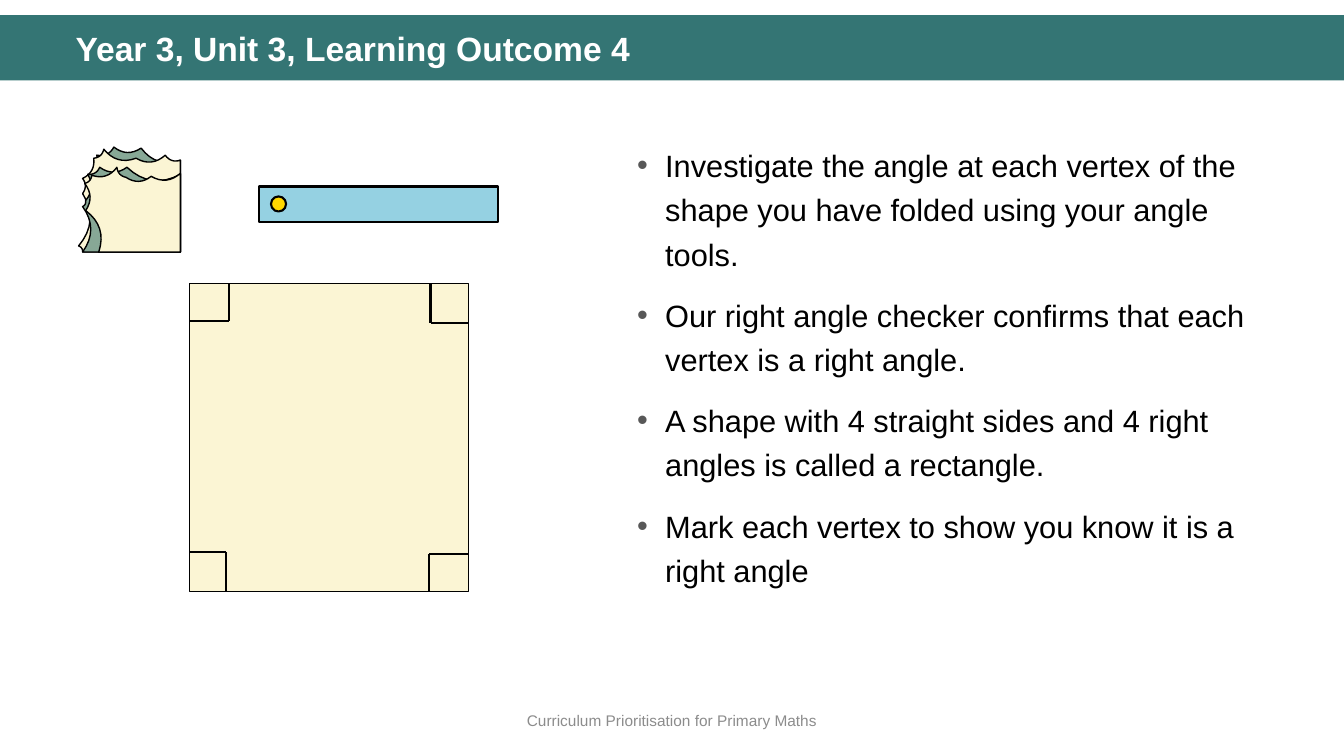
from dataclasses import dataclass
from itertools import pairwise

from lxml import etree
from pptx import Presentation
from pptx import util as u
from pptx.dml.color import RGBColor
from pptx.enum import shapes, text
from pptx.oxml import ns

COLOURS = {
    "band": "347574", "white": "FFFFFF", "black": "000000", "footer": "8C8C8C",
    "bullet": "585858", "paper": "FBF5D4", "shade": "87A896",
    "strip": "95D1E2", "pin": "FFD700",
}
FONT = "Arial"
CURVE_STEPS = 8
SAG = 0.18  # depth of a torn scallop as a share of its chord


@dataclass
class Box:
    left: float
    top: float
    width: float
    height: float


@dataclass
class Corner:
    """A right-angle mark between a vertex and an inner point, in cm."""
    vertex_x: float
    vertex_y: float
    inner_x: float
    inner_y: float


@dataclass
class Layer:
    """Torn paper: the cusps of its ragged edge, in hundredths of an inch."""
    colour: str
    cusps: list


FOLDED_SHEET = Box(4.78, 7.14, 7.03, 7.77)
CORNERS = [
    Corner(4.78, 7.14, 5.77, 8.08),
    Corner(11.79, 7.14, 10.85, 8.13),
    Corner(4.78, 14.91, 5.69, 13.92),
    Corner(11.79, 14.91, 10.82, 13.97),
]
TASKS = [
    "Investigate the angle at each vertex of the shape you have folded using your angle tools.",
    "Our right angle checker confirms that each vertex is a right angle.",
    "A shape with 4 straight sides and 4 right angles is called a rectangle.",
    "Mark each vertex to show you know it is a right angle",
]
CHECKER_VERTEX = (179, 250)
CHECKER_LAYERS = [
    Layer("shade", [(179, 159), (140, 147), (113, 146), (96, 154), (87, 176),
                    (96, 208), (98, 250)]),
    Layer("paper", [(179, 159), (164, 154), (135, 157), (103, 148), (93, 157),
                    (82, 177), (82, 192), (78, 244), (82, 250)]),
    Layer("shade", [(179, 173), (126, 166), (99, 166), (87, 173), (85, 199),
                    (82, 205), (82, 250)]),
    Layer("paper", [(179, 172), (150, 175), (125, 176), (116, 166), (91, 174),
                    (84, 182), (85, 209), (98, 250)]),
]


def rgb(name: str) -> RGBColor:
    return RGBColor.from_string(COLOURS[name])


def place(shape, box: Box) -> None:
    shape.left, shape.top = u.Cm(box.left), u.Cm(box.top)
    shape.width, shape.height = u.Cm(box.width), u.Cm(box.height)


def paint(shape, fill: str, line_width: float = 0) -> None:
    shape.shadow.inherit = False
    shape.fill.solid()
    shape.fill.fore_color.rgb = rgb(fill)
    if line_width:
        shape.line.color.rgb = rgb("black")
        shape.line.width = u.Pt(line_width)
    else:
        shape.line.fill.background()


def add_preset(slide, preset, box: Box, fill: str, line_width: float = 0):
    shape = slide.shapes.add_shape(preset, 0, 0, 0, 0)
    place(shape, box)
    paint(shape, fill, line_width)
    return shape


def add_run(paragraph, wording: str, size: float, colour: str, bold: bool = False) -> None:
    run = paragraph.add_run()
    run.text = wording
    run.font.name, run.font.size, run.font.bold = FONT, u.Pt(size), bold
    run.font.color.rgb = rgb(colour)


def add_bullet(paragraph) -> None:
    properties = paragraph._p.get_or_add_pPr()
    properties.set("marL", str(u.Cm(0.71)))
    properties.set("indent", str(-u.Cm(0.71)))
    colour = etree.SubElement(properties, ns.qn("a:buClr"))
    etree.SubElement(colour, ns.qn("a:srgbClr"), val=COLOURS["bullet"])
    etree.SubElement(properties, ns.qn("a:buFont"), typeface=FONT)
    etree.SubElement(properties, ns.qn("a:buChar"), char="•")


def add_line(slide, x1: float, y1: float, x2: float, y2: float) -> None:
    line = slide.shapes.add_connector(
        shapes.MSO_CONNECTOR.STRAIGHT, u.Cm(x1), u.Cm(y1), u.Cm(x2), u.Cm(y2))
    line.line.color.rgb = rgb("black")
    line.line.width = u.Pt(1.5)
    etree.SubElement(line.element.spPr, ns.qn("a:effectLst"))


def torn_edge(cusps: list) -> list:
    """Join the cusps with shallow scallops that bow into the paper."""
    points = [cusps[0]]
    for (x1, y1), (x2, y2) in pairwise(cusps):
        for index in range(1, CURVE_STEPS + 1):
            t = index / CURVE_STEPS
            depth = SAG * 4 * t * (1 - t)
            points.append((x1 + t * (x2 - x1) + depth * (y2 - y1),
                           y1 + t * (y2 - y1) - depth * (x2 - x1)))
    return points


def add_layer(slide, layer: Layer) -> None:
    start, *edge = [(u.Cm(2.54 * x / 100), u.Cm(2.54 * y / 100))
                    for x, y in [CHECKER_VERTEX, *torn_edge(layer.cusps)]]
    builder = slide.shapes.build_freeform(*start)
    builder.add_line_segments(edge, close=True)
    paint(builder.convert_to_shape(), layer.colour, 1)


def main() -> None:
    presentation = Presentation()
    presentation.slide_width, presentation.slide_height = u.Cm(33.87), u.Cm(19.05)
    slide = presentation.slides.add_slide(presentation.slide_layouts[1])
    title, body = slide.shapes.title, slide.placeholders[1]
    rectangle, oval = shapes.MSO_SHAPE.RECTANGLE, shapes.MSO_SHAPE.OVAL

    # Title on its band
    band = add_preset(slide, rectangle, Box(0, 0.38, 33.87, 1.65), "band")
    title.element.addprevious(band.element)
    place(title, Box(1.65, 0.69, 31.29, 1.19))
    title.text_frame.vertical_anchor = text.MSO_ANCHOR.TOP
    title.text_frame.auto_size = text.MSO_AUTO_SIZE.NONE
    heading = title.text_frame.paragraphs[0]
    heading.alignment, heading.line_spacing = text.PP_ALIGN.LEFT, 0.9
    add_run(heading, "Year 3, Unit 3, Learning Outcome 4", 24, "white", True)

    # Task list
    place(body, Box(15.8, 3.38, 16.43, 11.58))
    frame = body.text_frame
    frame.word_wrap, frame.auto_size = True, text.MSO_AUTO_SIZE.SHAPE_TO_FIT_TEXT
    for index, task in enumerate(TASKS):
        paragraph = frame.add_paragraph() if index else frame.paragraphs[0]
        add_bullet(paragraph)
        paragraph.line_spacing = 1.2
        paragraph.space_before, paragraph.space_after = u.Pt(6 if index else 0), u.Pt(6)
        add_run(paragraph, task, 22, "black")

    # Folded sheet, torn right-angle checker and angle strip
    add_preset(slide, rectangle, FOLDED_SHEET, "paper", 1)
    for layer in CHECKER_LAYERS:
        add_layer(slide, layer)
    add_preset(slide, rectangle, Box(6.53, 4.7, 6.02, 0.89), "strip", 1.5)
    add_preset(slide, oval, Box(6.83, 4.95, 0.38, 0.38), "pin", 1.5)

    # Right-angle marks
    for corner in CORNERS:
        add_line(slide, corner.vertex_x, corner.inner_y, corner.inner_x, corner.inner_y)
        add_line(slide, corner.inner_x, corner.vertex_y, corner.inner_x, corner.inner_y)

    # Footer
    footer = slide.shapes.add_textbox(0, 0, 0, 0)
    place(footer, Box(0, 17.65, 33.87, 1.02))
    footer.text_frame.word_wrap = True
    footer.text_frame.vertical_anchor = text.MSO_ANCHOR.MIDDLE
    caption = footer.text_frame.paragraphs[0]
    caption.alignment = text.PP_ALIGN.CENTER
    add_run(caption, "Curriculum Prioritisation for Primary Maths", 11, "footer")

    presentation.save("out.pptx")


if __name__ == "__main__":
    main()
